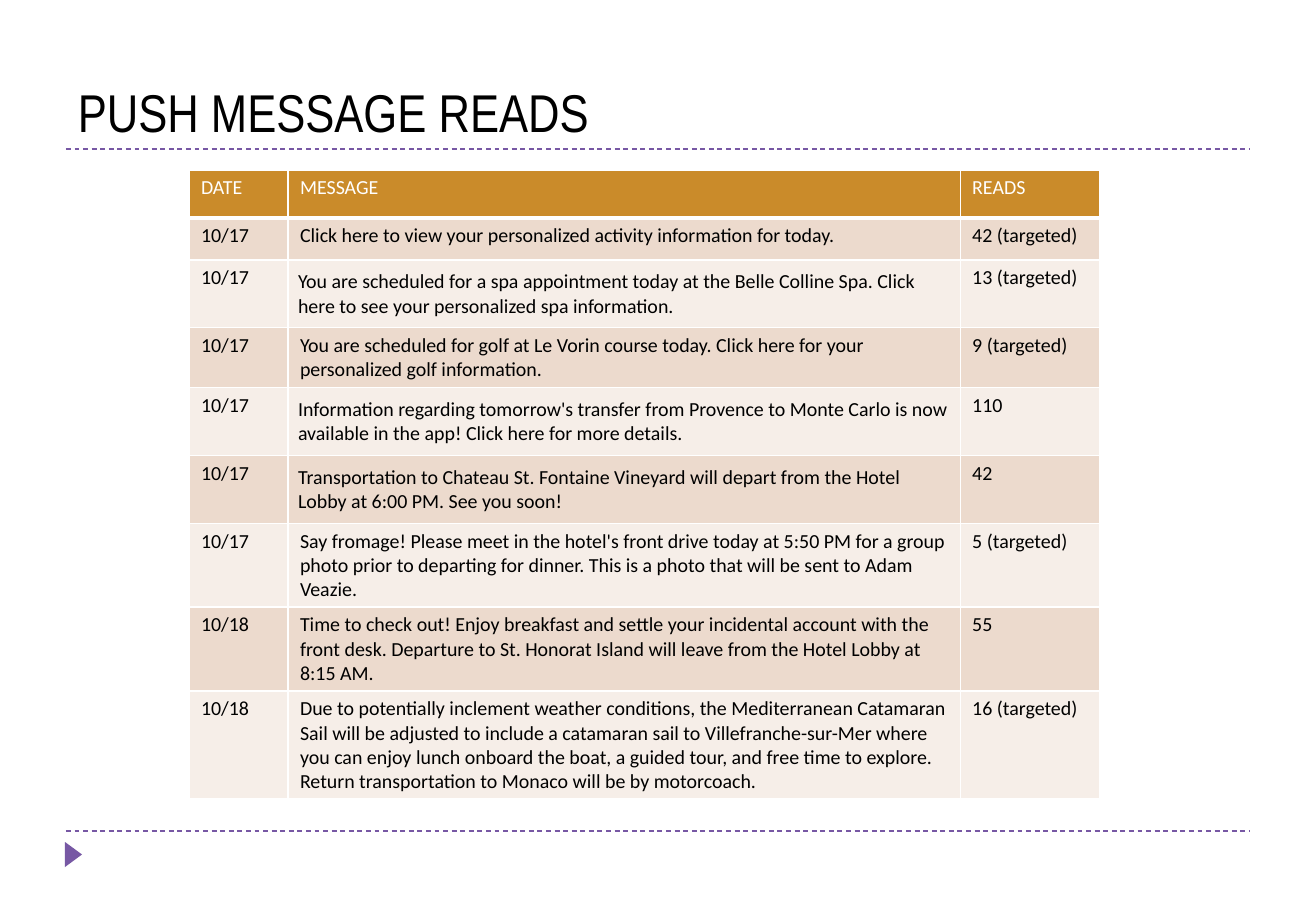
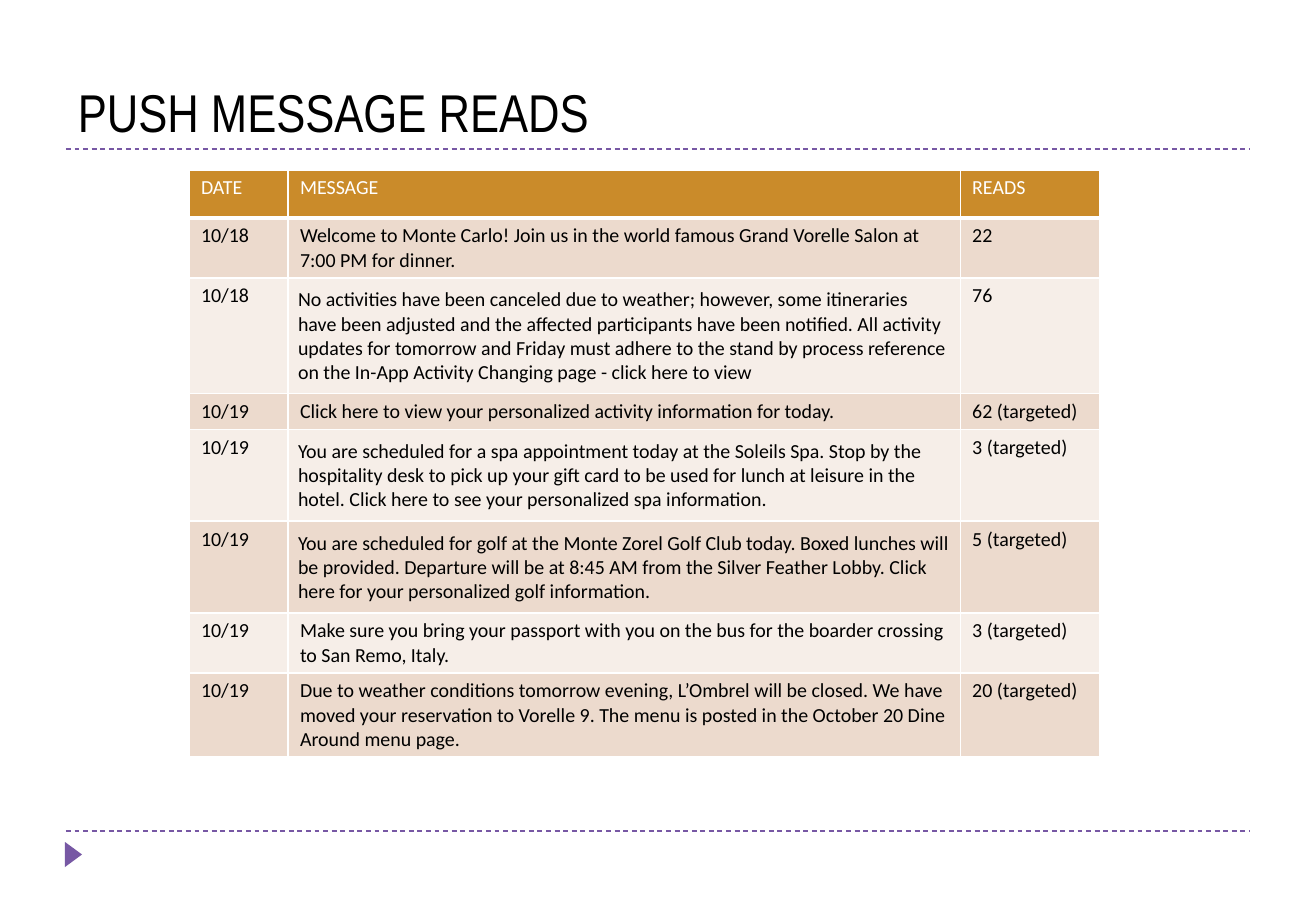
from lxml import etree
from pptx import Presentation
from pptx import util as u
from pptx.dml.color import RGBColor
from pptx.enum import dml, shapes, text
from pptx.oxml.ns import qn

TITLE = "PUSH MESSAGE READS"
HEADER = ("DATE", "MESSAGE", "READS")
PADDED = "padded"

# Each row: date, message, reads and, where the message cell is inset and centred, PADDED.
OCT_17_18 = [
    ("10/17", "Click here to view your personalized activity information for today.",
     "42 (targeted)"),
    ("10/17", "You are scheduled for a spa appointment today at the Belle Colline Spa. "
     "Click here to see your personalized spa information.", "13 (targeted)", PADDED),
    ("10/17", "You are scheduled for golf at Le Vorin course today. Click here for your "
     "personalized golf information.", "9 (targeted)"),
    ("10/17", "Information regarding tomorrow's transfer from Provence to Monte Carlo is now "
     "available in the app! Click here for more details.", "110", PADDED),
    ("10/17", "Transportation to Chateau St. Fontaine Vineyard will depart from the Hotel "
     "Lobby at 6:00 PM. See you soon!", "42", PADDED),
    ("10/17", "Say fromage! Please meet in the hotel's front drive today at 5:50 PM for a group "
     "photo prior to departing for dinner. This is a photo that will be sent to Adam Veazie.",
     "5 (targeted)"),
    ("10/18", "Time to check out! Enjoy breakfast and settle your incidental account with the "
     "front desk. Departure to St. Honorat Island will leave from the Hotel Lobby at 8:15 AM.",
     "55"),
    ("10/18", "Due to potentially inclement weather conditions, the Mediterranean Catamaran "
     "Sail will be adjusted to include a catamaran sail to Villefranche-sur-Mer where you can "
     "enjoy lunch onboard the boat, a guided tour, and free time to explore. Return "
     "transportation to Monaco will be by motorcoach.", "16 (targeted)"),
]
OCT_18_19 = [
    ("10/18", "Welcome to Monte Carlo! Join us in the world famous Grand Vorelle Salon at "
     "7:00 PM for dinner.", "22"),
    ("10/18", "No activities have been canceled due to weather; however, some itineraries have "
     "been adjusted and the affected participants have been notified. All activity updates for "
     "tomorrow and Friday must adhere to the stand by process reference on the In-App Activity "
     "Changing page - click here to view", "76", PADDED),
    ("10/19", "Click here to view your personalized activity information for today.",
     "62 (targeted)"),
    ("10/19", "You are scheduled for a spa appointment today at the Soleils Spa. Stop by the "
     "hospitality desk to pick up your gift card to be used for lunch at leisure in the hotel. "
     "Click here to see your personalized spa information.", "3 (targeted)", PADDED),
    ("10/19", "You are scheduled for golf at the Monte Zorel Golf Club today. Boxed lunches "
     "will be provided. Departure will be at 8:45 AM from the Silver Feather Lobby. Click here "
     "for your personalized golf information.", "5 (targeted)", PADDED),
    ("10/19", "Make sure you bring your passport with you on the bus for the boarder crossing "
     "to San Remo, Italy.", "3 (targeted)"),
    ("10/19", "Due to weather conditions tomorrow evening, L’Ombrel will be closed. We have "
     "moved your reservation to Vorelle 9. The menu is posted in the October 20 Dine Around "
     "menu page.", "20 (targeted)"),
]
# Rows and height of the table on each slide
SLIDES = [(OCT_17_18, 628), (OCT_18_19, 586)]

PURPLE, GOLD, BLACK, WHITE = "7758A4", "CA8B2A", "000000", "FFFFFF"
BANDS = ("ECDACD", "F6EEE8")
TITLE_FONT, BODY_FONT = "Arial Narrow", "Calibri"

LEFT, RIGHT = 66, 1250
TITLE_TOP, TITLE_RULE, FOOT_RULE = 20, 149, 831
TABLE_LEFT, TABLE_TOP = 189, 170
COL_W = (99, 672, 139)
ROW_MIN_H = (48, 42, 42, 29, 29, 44, 33, 28, 24)  # rows grow to fit their text
CELL_PAD = 10


def px(n):
    return u.Emu(round(n * 914400 / 119.6))


def rgb(color):
    return RGBColor.from_string(color)


def add_run(p, words, size, font, color):
    r = p.add_run()
    r.text = words
    r.font.size = u.Pt(size)
    r.font.name = font
    r.font.color.rgb = rgb(color)


def add_rule(s, y):
    """Draw a dashed line across the slide."""
    line = s.shapes.add_connector(shapes.MSO_CONNECTOR.STRAIGHT,
                                  px(LEFT), px(y), px(RIGHT), px(y))
    line.line.color.rgb = rgb(PURPLE)
    line.line.width = u.Pt(0.75)
    line.line.dash_style = dml.MSO_LINE.DASH
    etree.SubElement(line._element.spPr, qn("a:effectLst"))


def add_frame(s):
    """Add the rules, corner marker and title that every slide has."""
    add_rule(s, FOOT_RULE)
    add_rule(s, TITLE_RULE)
    marker = s.shapes.add_shape(shapes.MSO_SHAPE.ISOSCELES_TRIANGLE,
                                px(61), px(846), px(25), px(17))
    marker.rotation = 90
    marker.shadow.inherit = False
    marker.fill.solid()
    marker.fill.fore_color.rgb = rgb(PURPLE)
    marker.line.fill.background()

    title = s.shapes.add_textbox(px(LEFT), px(TITLE_TOP),
                                 px(RIGHT - LEFT), px(TITLE_RULE - TITLE_TOP))
    tf = title.text_frame
    tf.word_wrap = True
    tf.vertical_anchor = text.MSO_ANCHOR.BOTTOM
    add_run(tf.paragraphs[0], TITLE, 32, TITLE_FONT, BLACK)


def set_borders(cell, bottom):
    tcPr = cell._tc.get_or_add_tcPr()
    for side, width in (("L", 1), ("R", 1), ("T", 1), ("B", bottom)):
        ln = etree.SubElement(tcPr, qn("a:ln" + side), w=str(u.Pt(width)))
        fill = etree.SubElement(ln, qn("a:solidFill"))
        etree.SubElement(fill, qn("a:srgbClr"), val=WHITE)


def fill_cell(cell, words, fill, color, bottom=1):
    set_borders(cell, bottom)
    cell.fill.solid()
    cell.fill.fore_color.rgb = rgb(fill)
    add_run(cell.text_frame.paragraphs[0], words, 12, BODY_FONT, color)


def pad_cell(cell):
    cell.vertical_anchor = text.MSO_ANCHOR.MIDDLE
    cell.margin_left = cell.margin_right = px(CELL_PAD)
    cell.margin_top = cell.margin_bottom = px(CELL_PAD)


def add_reads_table(s, rows, height):
    frame = s.shapes.add_table(len(rows) + 1, len(HEADER), px(TABLE_LEFT), px(TABLE_TOP),
                               px(sum(COL_W)), px(height))
    table = frame.table
    for col, width in zip(table.columns, COL_W):
        col.width = px(width)
    for row, min_height in zip(table.rows, ROW_MIN_H):
        row.height = px(min_height)
    frame.height = px(height)

    for c, label in enumerate(HEADER):
        fill_cell(table.cell(0, c), label, GOLD, WHITE, bottom=3)
    for i, (date, message, reads, *style) in enumerate(rows):
        for c, words in enumerate((date, message, reads)):
            fill_cell(table.cell(i + 1, c), words, BANDS[i % 2], BLACK)
        if PADDED in style:
            pad_cell(table.cell(i + 1, 1))


def main():
    prs = Presentation()
    prs.slide_width, prs.slide_height = u.Inches(11), u.Inches(7.5)
    for rows, height in SLIDES:
        s = prs.slides.add_slide(prs.slide_layouts[6])
        add_frame(s)
        add_reads_table(s, rows, height)
    prs.save("out.pptx")


if __name__ == "__main__":
    main()
